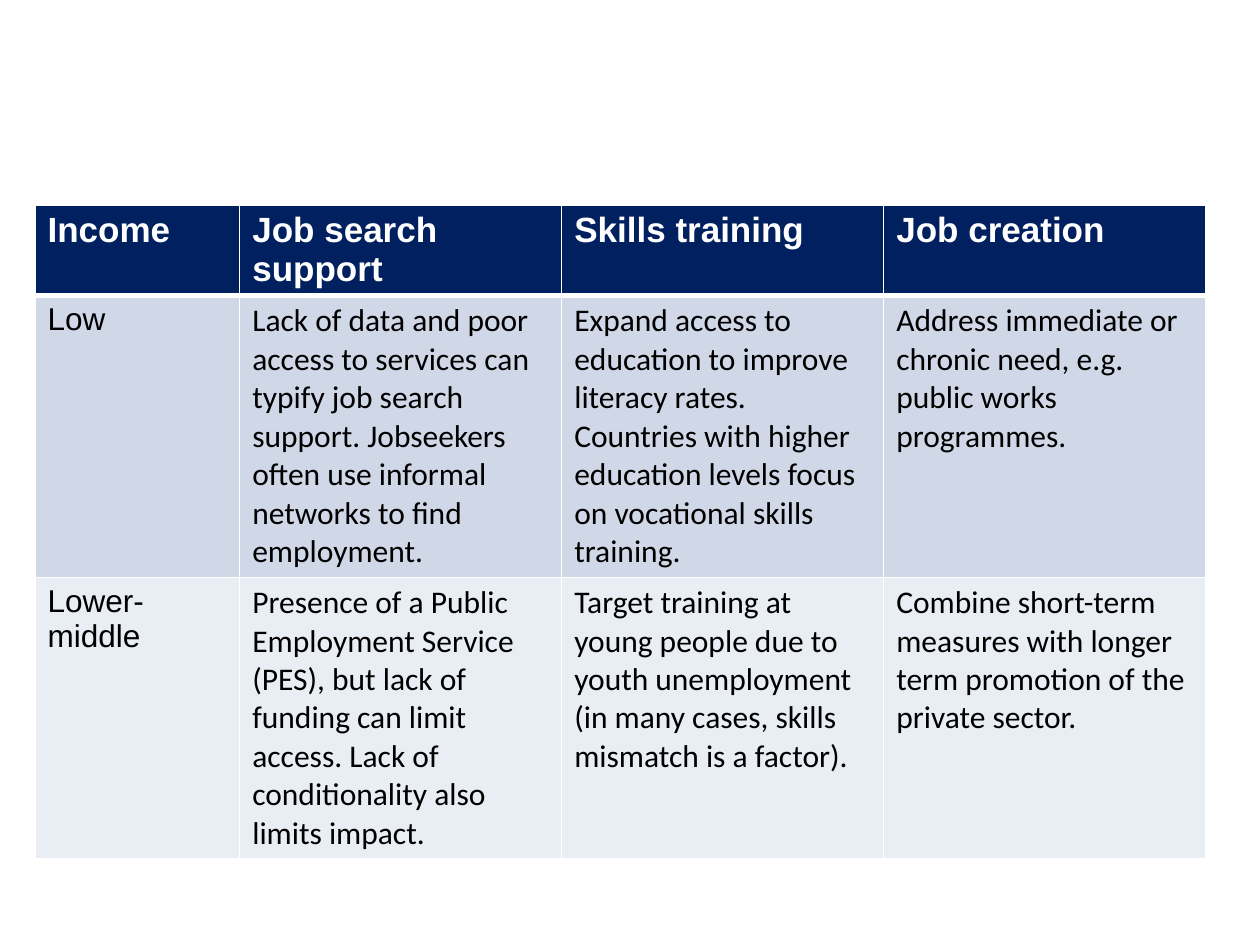
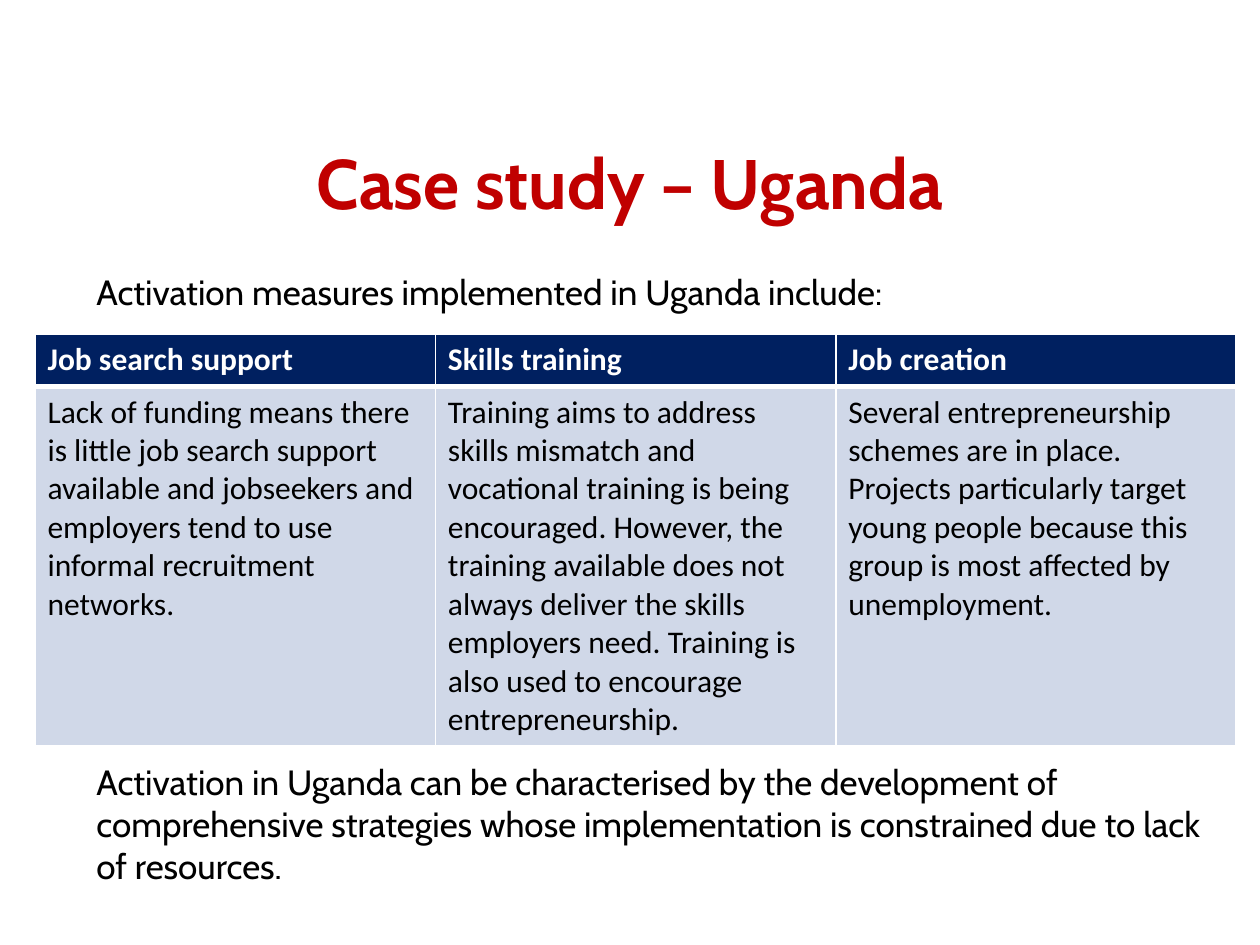
from typing import NamedTuple

import lxml.etree
import pptx
import pptx.dml.color
import pptx.enum.text
import pptx.oxml.ns
import pptx.slide
import pptx.table
import pptx.text.text
import pptx.util

Pt = pptx.util.Pt
ALIGN = pptx.enum.text.PP_ALIGN
ANCHOR = pptx.enum.text.MSO_ANCHOR

HUES = {
    "white": "FFFFFF",
    "black": "000000",
    "navy": "002060",
    "red": "C00000",
    "blue": "D0D8E8",
    "pale": "E9EDF4",
}
BANDS = ("blue", "pale")
LEFT = 20


class Style(NamedTuple):
    font: str
    size: float
    hue: str = "black"
    bold: bool = False


class Box(NamedTuple):
    left: float
    top: float
    width: float
    height: float


class Grid(NamedTuple):
    top: float
    cols: list[float]
    rows: list[float]
    head: Style
    styles: list[Style]
    cells: list[list[str]]


class Note(NamedTuple):
    box: Box
    text: str


TITLE = Style("Cabin", 40, "red", True)
PROSE = Style("Cabin", 20)
LABEL = Style("Arial", 18)
BODY = Style("Calibri", 18)

INCOME = Grid(
    top=117,
    cols=[117] + [184] * 3,
    rows=[51, 161, 161],
    head=Style("Arial", 20, "white", True),
    styles=[LABEL] + [BODY] * 3,
    cells=[
        ["Income", "Job search support", "Skills training", "Job creation"],
        [
            "Low",
            "Lack of data and poor access to services can typify job search support. "
            "Jobseekers often use informal networks to find employment.",
            "Expand access to education to improve literacy rates. Countries with "
            "higher education levels focus on vocational skills training.",
            "Address immediate or chronic need, e.g. public works programmes.",
        ],
        [
            "Lower-middle",
            "Presence of a Public Employment Service (PES), but lack of funding can "
            "limit access. Lack of conditionality also limits impact.",
            "Target training at young people due to youth unemployment "
            "(in many cases, skills mismatch is a factor).",
            "Combine short-term measures with longer term promotion of the "
            "private sector.",
        ],
    ],
)

UGANDA = Grid(
    top=191,
    cols=[228.8] * 3,
    rows=[30, 205],
    head=Style("Calibri", 18, "white", True),
    styles=[BODY] * 3,
    cells=[
        ["Job search support", "Skills training", "Job creation"],
        [
            "Lack of funding means there is little job search support available and "
            "jobseekers and employers tend to use informal recruitment networks.",
            "Training aims to address skills mismatch and vocational training is "
            "being encouraged. However, the training available does not always "
            "deliver the skills employers need. Training is also used to encourage "
            "entrepreneurship.",
            "Several entrepreneurship schemes are in place. Projects particularly "
            "target young people because this group is most affected by "
            "unemployment.",
        ],
    ],
)

NOTES = [
    Note(Box(48, 151, 648, 32), "Activation measures implemented in Uganda include:"),
    Note(
        Box(48, 431, 648, 80),
        "Activation in Uganda can be characterised by the development of "
        "comprehensive strategies whose implementation is constrained due to "
        "lack of resources.",
    ),
]


def write(frame: pptx.text.text.TextFrame, text: str, style: Style) -> None:
    run = frame.paragraphs[0].add_run()
    run.text = text
    font = run.font
    font.name, font.size, font.bold = style.font, Pt(style.size), style.bold
    font.color.rgb = pptx.dml.color.RGBColor.from_string(HUES[style.hue])


def edge(cell: pptx.table._Cell, sides: dict[str, float]) -> None:
    """Give each side (L, R, T, B) a white line of its width in points."""
    props = cell._tc.get_or_add_tcPr()
    qn = pptx.oxml.ns.qn
    for side, width in sides.items():
        line = lxml.etree.SubElement(props, qn(f"a:ln{side}"), w=str(Pt(width)))
        fill = lxml.etree.SubElement(line, qn("a:solidFill"))
        lxml.etree.SubElement(fill, qn("a:srgbClr"), val=HUES["white"])


def draw_grid(slide: pptx.slide.Slide, grid: Grid) -> None:
    table = slide.shapes.add_table(
        len(grid.rows), len(grid.cols),
        Pt(LEFT), Pt(grid.top), Pt(sum(grid.cols)), Pt(sum(grid.rows)),
    ).table
    for col, width in zip(table.columns, grid.cols):
        col.width = Pt(width)
    for r, (row, height) in enumerate(zip(table.rows, grid.rows)):
        row.height = Pt(height)
        hue = BANDS[(r - 1) % 2] if r else "navy"
        sides = {"L": 1, "R": 1, "T": 3 if r == 1 else 1, "B": 1 if r else 3}
        for c, cell in enumerate(row.cells):
            edge(cell, sides)
            cell.fill.solid()
            cell.fill.fore_color.rgb = pptx.dml.color.RGBColor.from_string(HUES[hue])
            write(cell.text_frame, grid.cells[r][c], grid.styles[c] if r else grid.head)


def draw_title(slide: pptx.slide.Slide, box: Box, text: str) -> None:
    title = slide.shapes.title
    title.left, title.top, title.width, title.height = map(Pt, box)
    frame = title.text_frame
    frame.vertical_anchor = ANCHOR.MIDDLE
    frame.paragraphs[0].alignment = ALIGN.CENTER
    write(frame, text, TITLE)


def draw_note(slide: pptx.slide.Slide, note: Note) -> None:
    frame = slide.shapes.add_textbox(*map(Pt, note.box)).text_frame
    frame.word_wrap = True
    write(frame, note.text, PROSE)


def main() -> None:
    deck = pptx.Presentation()
    deck.slide_width, deck.slide_height = Pt(720), Pt(540)
    plain = deck.slide_layouts.get_by_name("Blank")
    titled = deck.slide_layouts.get_by_name("Title Only")

    draw_grid(deck.slides.add_slide(plain), INCOME)

    study = deck.slides.add_slide(titled)
    draw_title(study, Box(54, 50, 612, 107), "Case study – Uganda")
    for note in NOTES:
        draw_note(study, note)
    draw_grid(study, UGANDA)

    deck.save("out.pptx")


if __name__ == "__main__":
    main()
